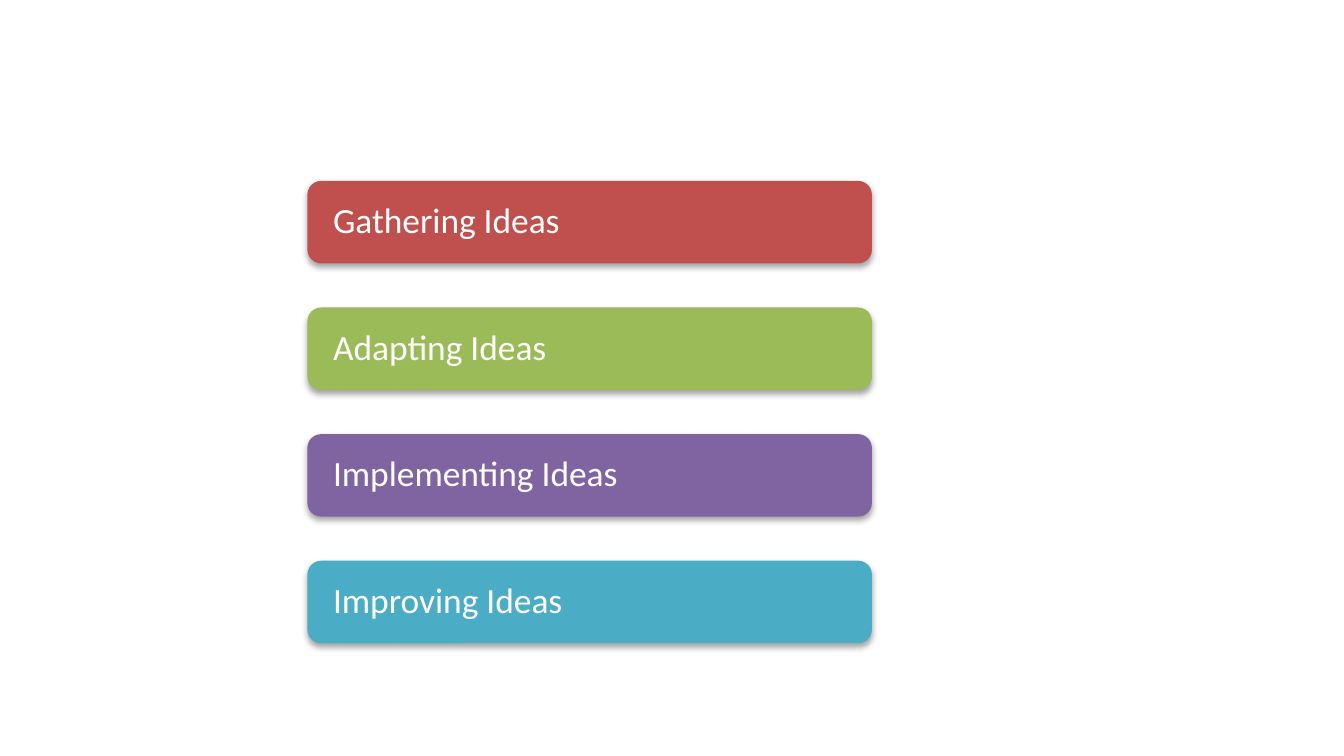
from lxml import etree
from pptx import Presentation
from pptx import util as u
from pptx.dml.color import RGBColor
from pptx.enum import shapes, text
from pptx.oxml import ns

COLORS = {
    "red": "C0504D",
    "green": "9BBB59",
    "purple": "8064A2",
    "teal": "4BACC6",
    "text": "FFFFFF",
    "shadow": "000000",
}
STAGES = [
    ("Gathering Ideas", "red"),
    ("Adapting Ideas", "green"),
    ("Implementing Ideas", "purple"),
    ("Improving Ideas", "teal"),
]
BAR_HEIGHT = 1.56


def write_text(shape, content, size=19, font="Calibri", color="text", inset=0.41):
    frame = shape.text_frame
    frame.word_wrap = True
    frame.vertical_anchor = text.MSO_ANCHOR.MIDDLE
    frame.margin_left = frame.margin_right = u.Cm(inset)
    frame.margin_top = frame.margin_bottom = 0
    paragraph = frame.paragraphs[0]
    paragraph.alignment = text.PP_ALIGN.LEFT
    paragraph.line_spacing = 0.9
    run = paragraph.add_run()
    run.text = content
    run.font.size = u.Pt(size)
    run.font.name = font
    run.font.color.rgb = RGBColor.from_string(COLORS[color])


def add_shadow(shape, blur=3.1, distance=1.8, opacity=35):
    shape.shadow.inherit = False
    effects = shape.element.spPr.find(ns.qn("a:effectLst"))
    shadow = etree.SubElement(
        effects,
        ns.qn("a:outerShdw"),
        blurRad=str(u.Pt(blur)),
        dist=str(u.Pt(distance)),
        dir="5400000",
        rotWithShape="0",
    )
    color = etree.SubElement(shadow, ns.qn("a:srgbClr"), val=COLORS["shadow"])
    etree.SubElement(color, ns.qn("a:alpha"), val=str(opacity * 1000))


def add_stage_list(slide, left, top, width, height):
    pitch = (height - BAR_HEIGHT) / (len(STAGES) - 1)
    for index, (label, color) in enumerate(STAGES):
        bar = slide.shapes.add_shape(
            shapes.MSO_SHAPE.ROUNDED_RECTANGLE,
            u.Cm(left),
            u.Cm(top + index * pitch),
            u.Cm(width),
            u.Cm(BAR_HEIGHT),
        )
        bar.fill.solid()
        bar.fill.fore_color.rgb = RGBColor.from_string(COLORS[color])
        bar.line.fill.background()
        add_shadow(bar)
        write_text(bar, label)


def main():
    presentation = Presentation()
    presentation.slide_width = u.Cm(25.4)
    presentation.slide_height = u.Cm(14.29)
    slide = presentation.slides.add_slide(presentation.slide_layouts[6])
    add_stage_list(slide, 5.81, 3.42, 10.67, 8.74)
    presentation.save("out.pptx")


if __name__ == "__main__":
    main()
